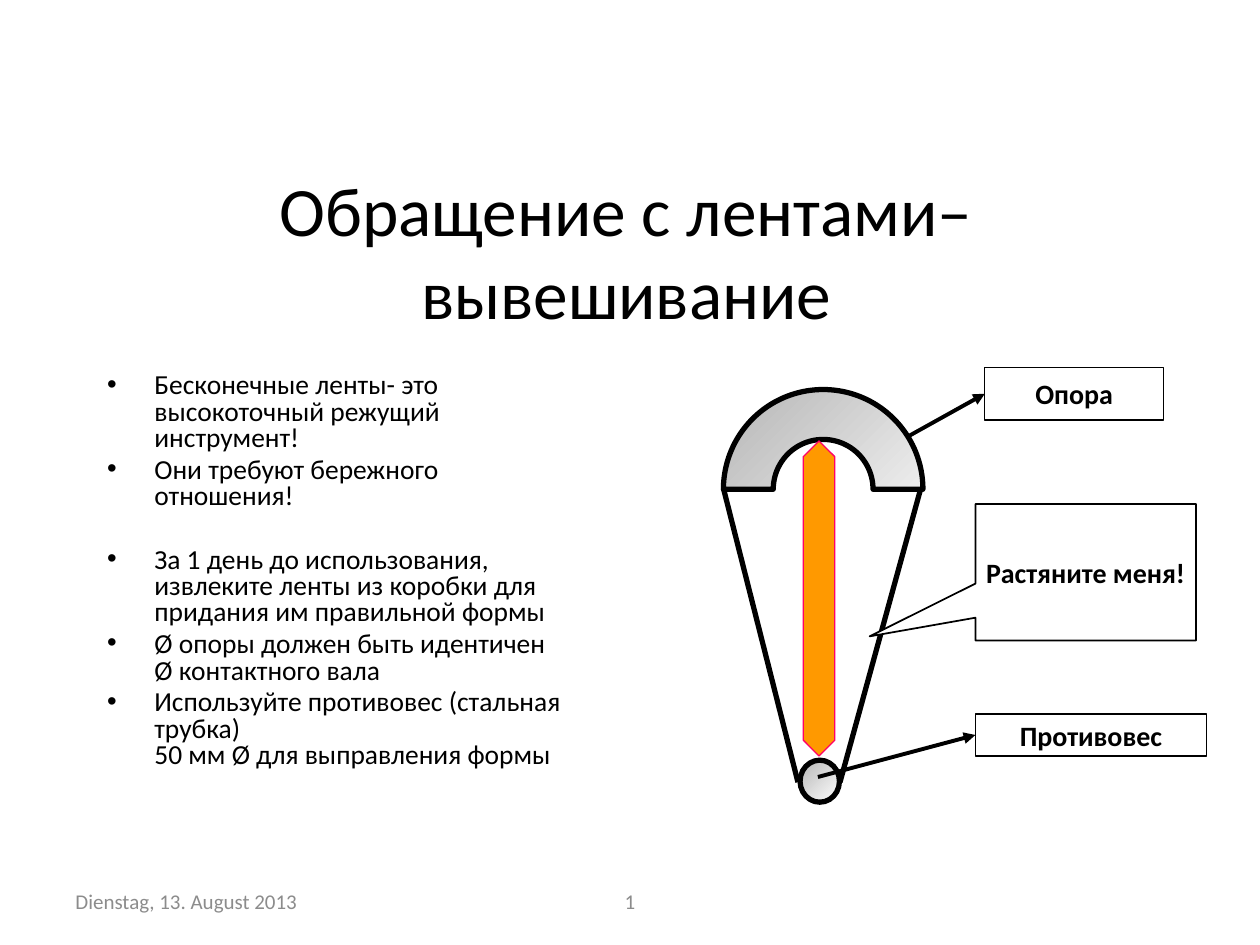
from dataclasses import dataclass

from lxml.etree import SubElement
from pptx import Presentation
from pptx.dml.color import RGBColor
from pptx.enum.shapes import MSO_CONNECTOR, MSO_SHAPE
from pptx.enum.text import MSO_ANCHOR, MSO_AUTO_SIZE, PP_ALIGN
from pptx.oxml.ns import qn
from pptx.shapes.autoshape import Shape
from pptx.shapes.connector import Connector
from pptx.slide import Slide
from pptx.text.text import TextFrame
from pptx.util import Inches, Pt

COLUMNS, ROWS = 120, 90
SLIDE_WIDTH, SLIDE_HEIGHT = Inches(10), Inches(7.5)
LEFT_SIDE = 1


@dataclass(frozen=True)
class Theme:
    font: str = "Calibri"
    ink: str = "000000"
    paper: str = "FFFFFF"
    steel: str = "B6B6B6"
    footer: str = "8C8C8C"
    stretch_fill: str = "FF9900"
    stretch_line: str = "FF0066"
    title_size: float = 39.6
    body_size: float = 15.7
    label_size: float = 16
    footer_size: float = 12
    band_line: float = 3
    pointer_line: float = 2.25
    callout_line: float = 1
    thin_line: float = 0.75


@dataclass(frozen=True)
class Point:
    column: float
    row: float

    def emu(self) -> tuple[int, int]:
        return (round(SLIDE_WIDTH * self.column / COLUMNS),
                round(SLIDE_HEIGHT * self.row / ROWS))


@dataclass(frozen=True)
class Box:
    column: float
    row: float
    columns: float
    rows: float

    def emu(self) -> tuple[int, int, int, int]:
        return (*Point(self.column, self.row).emu(),
                *Point(self.columns, self.rows).emu())


@dataclass(frozen=True)
class Item:
    text: str
    space_before: float = 3.1


@dataclass(frozen=True)
class Label:
    text: str
    box: Box
    line_width: float = Theme.thin_line
    preset: MSO_SHAPE = MSO_SHAPE.RECTANGLE


THEME = Theme()
TITLE = "Обращение с лентами– вывешивание"
ITEMS = (
    Item("Бесконечные ленты- это высокоточный режущий инструмент!"),
    Item("Они требуют бережного отношения!"),
    Item("За 1 день до использования, извлеките ленты из коробки "
         "для придания им правильной формы", space_before=21),
    Item("Ø опоры должен быть идентичен\nØ контактного вала"),
    Item("Используйте противовес (стальная трубка)\n"
         "50 мм Ø для выправления формы"),
)
STRETCH = Label("Растяните меня!", Box(92.9, 48, 21, 13), THEME.callout_line,
                MSO_SHAPE.RECTANGULAR_CALLOUT)
SUPPORT = Label("Опора", Box(93.8, 35, 17, 5))
COUNTERWEIGHT = Label("Противовес", Box(92.9, 68, 22, 4))


def format_text(frame: TextFrame, size: float, color: str, bold: bool = False) -> None:
    for paragraph in frame.paragraphs:
        for run in paragraph.runs:
            run.font.name = THEME.font
            run.font.size = Pt(size)
            run.font.bold = bold
            run.font.color.rgb = RGBColor.from_string(color)


def place(shape: Shape, box: Box) -> None:
    shape.left, shape.top, shape.width, shape.height = box.emu()


def add_title(slide: Slide) -> None:
    title = slide.shapes.title
    place(title, Box(8, 16.3, 103.3, 15))
    frame = title.text_frame
    frame.text = TITLE
    frame.auto_size = MSO_AUTO_SIZE.NONE
    frame.vertical_anchor = MSO_ANCHOR.MIDDLE
    format_text(frame, THEME.title_size, THEME.ink)


def add_instructions(slide: Slide) -> None:
    body = slide.placeholders[1]
    place(body, Box(9, 35, 47.5, 44.2))
    frame = body.text_frame
    frame.auto_size = MSO_AUTO_SIZE.NONE
    for index, item in enumerate(ITEMS):
        paragraph = frame.add_paragraph() if index else frame.paragraphs[0]
        paragraph.text = item.text
        paragraph.line_spacing = 0.8
        paragraph.space_before = Pt(item.space_before)
    format_text(frame, THEME.body_size, THEME.ink)


def add_footer(slide: Slide, text: str, box: Box, align: PP_ALIGN) -> None:
    frame = slide.shapes.add_textbox(*box.emu()).text_frame
    frame.text = text
    frame.word_wrap = True
    frame.vertical_anchor = MSO_ANCHOR.MIDDLE
    frame.paragraphs[0].alignment = align
    format_text(frame, THEME.footer_size, THEME.footer)


def add_solid(slide: Slide, preset: MSO_SHAPE, box: Box, fill: str,
              line: str, width: float) -> Shape:
    shape = slide.shapes.add_shape(preset, *box.emu())
    shape.shadow.inherit = False
    shape.fill.solid()
    shape.fill.fore_color.rgb = RGBColor.from_string(fill)
    shape.line.color.rgb = RGBColor.from_string(line)
    shape.line.width = Pt(width)
    return shape


def add_steel(slide: Slide, preset: MSO_SHAPE, box: Box) -> None:
    """Draw a steel part shaded from upper left to lower right."""
    part = add_solid(slide, preset, box, THEME.steel, THEME.ink, THEME.band_line)
    part.fill.gradient()
    part.fill.gradient_angle = 315
    for stop, color, position in zip(part.fill.gradient_stops,
                                     (THEME.steel, THEME.paper), (0, 1)):
        stop.color.rgb = RGBColor.from_string(color)
        stop.position = position


def add_label(slide: Slide, label: Label) -> Shape:
    shape = add_solid(slide, label.preset, label.box, THEME.paper,
                      THEME.ink, label.line_width)
    frame = shape.text_frame
    frame.text = label.text
    frame.word_wrap = False
    frame.vertical_anchor = MSO_ANCHOR.MIDDLE
    frame.paragraphs[0].alignment = PP_ALIGN.CENTER
    format_text(frame, THEME.label_size, THEME.ink, bold=True)
    return shape


def add_line(slide: Slide, start: Point, end: Point, width: float) -> Connector:
    line = slide.shapes.add_connector(MSO_CONNECTOR.STRAIGHT, *start.emu(), *end.emu())
    line.line.color.rgb = RGBColor.from_string(THEME.ink)
    line.line.width = Pt(width)
    SubElement(line._element.spPr, qn("a:effectLst"))
    return line


def add_pointer(slide: Slide, start: Point, target: Shape) -> None:
    """Draw an arrow to the left side of a label."""
    pointer = add_line(slide, start, start, THEME.pointer_line)
    pointer.end_connect(target, LEFT_SIDE)
    SubElement(pointer.line._get_or_add_ln(), qn("a:tailEnd"), type="triangle")


def add_hanging_band(slide: Slide) -> None:
    add_line(slide, Point(87.7, 46.5), Point(80, 74.5), THEME.band_line)
    add_steel(slide, MSO_SHAPE.OVAL, Box(76.2, 72.4, 3.75, 4))
    callout = add_label(slide, STRETCH)
    callout.adjustments[0], callout.adjustments[1] = -0.98, 0.47
    add_steel(slide, MSO_SHAPE.BLOCK_ARC, Box(68.9, 37.1, 19, 19))
    add_line(slide, Point(68.9, 46.5), Point(76, 74.5), THEME.band_line)
    support = add_label(slide, SUPPORT)
    stretch = add_solid(slide, MSO_SHAPE.UP_DOWN_ARROW, Box(76.5, 42, 3, 30),
                        THEME.stretch_fill, THEME.stretch_line, THEME.thin_line)
    stretch.adjustments[0], stretch.adjustments[1] = 0.5, 2
    add_pointer(slide, Point(86.6, 41.5), support)
    counterweight = add_label(slide, COUNTERWEIGHT)
    add_pointer(slide, Point(77.9, 74), counterweight)


def main() -> None:
    deck = Presentation()
    deck.slide_width, deck.slide_height = SLIDE_WIDTH, SLIDE_HEIGHT
    slide = deck.slides.add_slide(deck.slide_layouts[1])
    add_footer(slide, "Dienstag, 13. August 2013", Box(6, 83.4, 28, 4.8), PP_ALIGN.LEFT)
    add_footer(slide, "1", Box(41, 83.4, 38, 4.8), PP_ALIGN.CENTER)
    add_title(slide)
    add_instructions(slide)
    add_hanging_band(slide)
    deck.save("out.pptx")


if __name__ == "__main__":
    main()
